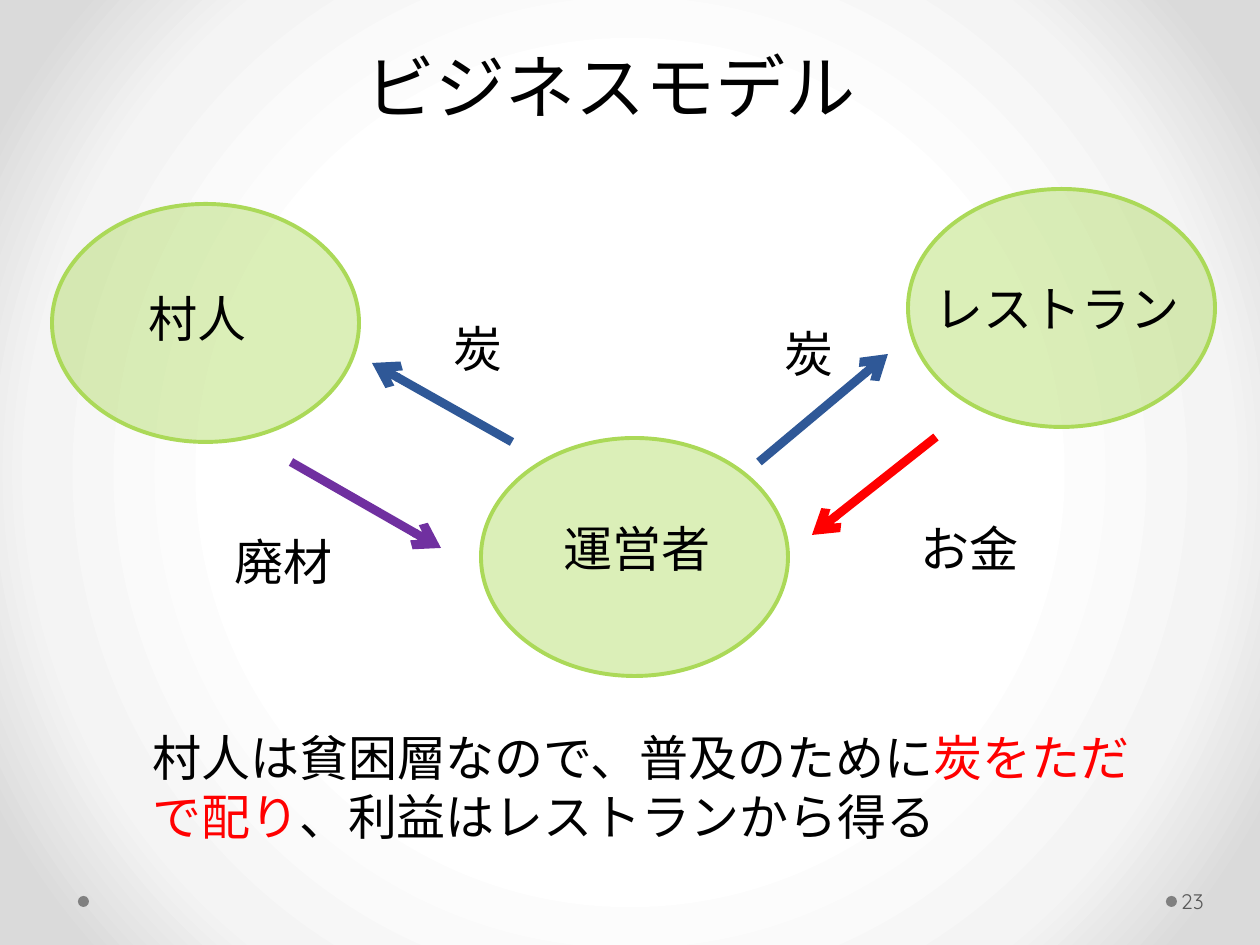
from lxml import etree
from pptx import Presentation
from pptx.dml.color import RGBColor
from pptx.enum.shapes import MSO_CONNECTOR, MSO_SHAPE
from pptx.enum.text import MSO_ANCHOR, MSO_AUTO_SIZE, PP_ALIGN
from pptx.oxml import parse_xml
from pptx.oxml.ns import nsdecls, qn
from pptx.util import Emu, Pt

EMU_PER_PX = 914400 / 126
BODY_FONT = "Cambria"
NUMBER_FONT = "Quicksand"

BLACK = RGBColor(0x00, 0x00, 0x00)
RED = RGBColor(0xFF, 0x00, 0x00)
BLUE = RGBColor(0x2F, 0x58, 0x97)
PURPLE = RGBColor(0x70, 0x30, 0xA0)
GREEN = RGBColor(0xAB, 0xD9, 0x58)
GRAY = RGBColor(0x80, 0x80, 0x80)
DARK_GRAY = RGBColor(0x59, 0x59, 0x59)

BACKDROP_STOPS = [(50, "FFFFFF"), (76, "F4F4F4"), (92, "DADADA")]
PARTY_SIZE = (307, 238)
PARTIES = [(481, 438), (908, 189), (52, 204)]
LABELS = [
    ("廃材", 222, 525, 139),
    ("炭", 441, 312, 139),
    ("レストラン", 922, 272, 277),
    ("運営者", 551, 512, 180),
    ("村人", 136, 282, 139),
    ("炭", 772, 317, 79),
    ("お金", 908, 512, 154),
]
FLOWS = [
    ((512, 442), (372, 363), BLUE),
    ((759, 462), (888, 354), BLUE),
    ((291, 462), (441, 548), PURPLE),
    ((936, 437), (812, 535), RED),
]
SUMMARY = [
    ("村人は貧困層なので、普及のために", BLACK),
    ("炭をただで配り", RED),
    ("、利益はレストランから得る", BLACK),
]


def px(*lengths):
    return [Emu(round(length * EMU_PER_PX)) for length in lengths]


def set_backdrop(slide):
    """Fill the background with a gradient spreading from the centre."""
    stops = "".join(
        f'<a:gs pos="{percent * 1000}"><a:srgbClr val="{color}"/></a:gs>'
        for percent, color in BACKDROP_STOPS
    )
    backdrop = parse_xml(
        f'<p:bg {nsdecls("p", "a")}><p:bgPr><a:gradFill rotWithShape="1">'
        f'<a:gsLst>{stops}</a:gsLst><a:path path="circle">'
        '<a:fillToRect l="50000" t="50000" r="50000" b="50000"/></a:path>'
        '</a:gradFill><a:effectLst/></p:bgPr></p:bg>'
    )
    slide.element.cSld.insert(0, backdrop)


def style(paragraph, size, color=None, font_name=BODY_FONT):
    paragraph.font.name = font_name
    paragraph.font.size = Pt(size)
    if color is not None:
        paragraph.font.color.rgb = color


def set_title(slide, text):
    title = slide.shapes.title
    title.left, title.top, title.width, title.height = px(353, 37, 674, 97)
    frame = title.text_frame
    frame.text = text
    frame.vertical_anchor = MSO_ANCHOR.TOP
    frame.auto_size = MSO_AUTO_SIZE.SHAPE_TO_FIT_TEXT
    frame.paragraphs[0].alignment = PP_ALIGN.LEFT
    style(frame.paragraphs[0], 40, BLACK)


def add_text_frame(slide, left, top, width, height):
    frame = slide.shapes.add_textbox(*px(left, top, width, height)).text_frame
    frame.word_wrap = True
    return frame


def add_label(slide, text, left, top, width):
    frame = add_text_frame(slide, left, top, width, 72)
    frame.auto_size = MSO_AUTO_SIZE.SHAPE_TO_FIT_TEXT
    frame.text = text
    style(frame.paragraphs[0], 28, BLACK)


def add_ellipse(slide, left, top, width, height, color):
    ellipse = slide.shapes.add_shape(MSO_SHAPE.OVAL, *px(left, top, width, height))
    ellipse.shadow.inherit = False
    ellipse.fill.solid()
    ellipse.fill.fore_color.rgb = color
    return ellipse


def add_party(slide, left, top):
    party = add_ellipse(slide, left, top, *PARTY_SIZE, GREEN)
    fill_color = party.element.spPr.find(qn("a:solidFill"))[0]
    etree.SubElement(fill_color, qn("a:alpha"), val="42000")
    party.line.color.rgb = GREEN
    party.line.width = Pt(2.25)


def add_flow(slide, start, end, color):
    flow = slide.shapes.add_connector(MSO_CONNECTOR.STRAIGHT, *px(*start, *end))
    flow.line.color.rgb = color
    flow.line.width = Pt(5)
    properties = flow.element.spPr
    etree.SubElement(properties.find(qn("a:ln")), qn("a:tailEnd"), type="arrow")
    etree.SubElement(properties, qn("a:effectLst"))


def add_summary(slide):
    frame = add_text_frame(slide, 140, 721, 1029, 131)
    frame.auto_size = MSO_AUTO_SIZE.SHAPE_TO_FIT_TEXT
    paragraph = frame.paragraphs[0]
    style(paragraph, 28)
    for text, color in SUMMARY:
        run = paragraph.add_run()
        run.text = text
        run.font.color.rgb = color


def add_footer(slide, number):
    for left in (1166, 78):
        add_ellipse(slide, left, 896, 11, 11, GRAY).line.fill.background()
    frame = add_text_frame(slide, 1177, 876, 77, 50)
    frame.margin_left, frame.margin_right = px(4, 6)
    frame.vertical_anchor = MSO_ANCHOR.MIDDLE
    frame.text = number
    style(frame.paragraphs[0], 12, DARK_GRAY, NUMBER_FONT)


def main():
    prs = Presentation()
    prs.slide_width, prs.slide_height = px(1260, 945)
    slide = prs.slides.add_slide(prs.slide_layouts.get_by_name("Title Only"))

    set_backdrop(slide)
    add_footer(slide, "23")
    set_title(slide, "ビジネスモデル")
    for position in PARTIES:
        add_party(slide, *position)
    for label in LABELS:
        add_label(slide, *label)
    for flow in FLOWS:
        add_flow(slide, *flow)
    add_summary(slide)

    prs.save("out.pptx")


if __name__ == "__main__":
    main()
